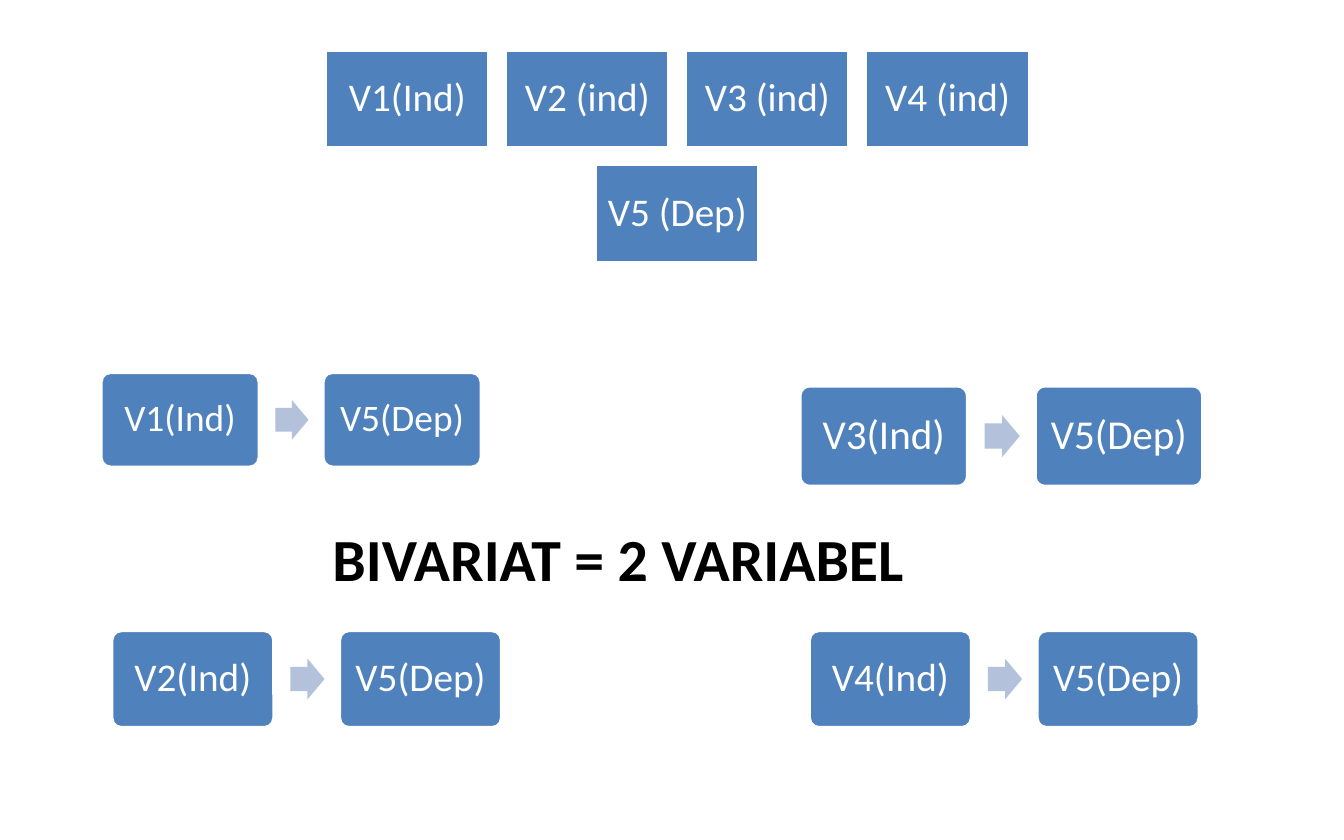
"""Build a slide of variable boxes and their bivariate pairings."""
from pptx import Presentation
from pptx.dml.color import RGBColor as Rgb
from pptx.enum.shapes import MSO_SHAPE as Shape
from pptx.enum.text import MSO_ANCHOR as Anchor, MSO_AUTO_SIZE as AutoSize, PP_ALIGN as Align
from pptx.util import Inches, Pt

COLORS = {"box": "4F81BD", "arrow": "B3C1DB", "white": "FFFFFF", "black": "000000"}
WIDTH, HEIGHT = 10, 6.25
BOX_RATIO = 0.6
GRID_BOX, GRID_GAP = 1.22, 0.12
GRID_CENTER, GRID_TOP = 5.04, 0.37
GRID_ROWS = [["V1(Ind)", "V2 (ind)", "V3 (ind)", "V4 (ind)"], ["V5 (Dep)"]]
PAIRS = [
    ("V1(Ind)", 0.75, 2.77, 1.18, 20),
    ("V2(Ind)", 0.83, 4.69, 1.21, 21),
    ("V3(Ind)", 5.95, 2.87, 1.25, 22),
    ("V4(Ind)", 6.02, 4.69, 1.21, 21),
]


def color(name):
    return Rgb.from_string(COLORS[name])


def write_text(shape, text, size, ink, bold=False, spacing=0.9):
    frame = shape.text_frame
    frame_format = {"word_wrap": False, "auto_size": AutoSize.NONE,
                    "vertical_anchor": Anchor.MIDDLE}
    for name, value in frame_format.items():
        setattr(frame, name, value)
    para = frame.paragraphs[0]
    para.alignment, para.line_spacing = Align.CENTER, spacing
    span = para.add_run()
    span.text = text
    for name, value in {"name": "Calibri", "size": Pt(size), "bold": bold}.items():
        setattr(span.font, name, value)
    span.font.color.rgb = color(ink)


def add_filled(page, kind, left, top, width, height, fill):
    shape = page.shapes.add_shape(kind, *map(Inches, (left, top, width, height)))
    shape.shadow.inherit = False
    shape.fill.solid()
    shape.fill.fore_color.rgb = color(fill)
    shape.line.fill.background()
    return shape


def add_box(page, kind, text, left, top, width, size):
    box = add_filled(page, kind, left, top, width, width * BOX_RATIO, "box")
    box.line.color.rgb = color("white")
    box.line.width = Pt(2)
    if kind == Shape.ROUNDED_RECTANGLE:
        box.adjustments[0] = 0.1
    write_text(box, text, size, "white")


def add_grid(page):
    for row, labels in enumerate(GRID_ROWS):
        span = len(labels) * (GRID_BOX + GRID_GAP) - GRID_GAP
        top = GRID_TOP + row * (GRID_BOX * BOX_RATIO + GRID_GAP)
        for column, label in enumerate(labels):
            left = GRID_CENTER - span / 2 + column * (GRID_BOX + GRID_GAP)
            add_box(page, Shape.RECTANGLE, label, left, top, GRID_BOX, 21)


def add_pair(page, source, left, top, width, size):
    for column, label in enumerate((source, "V5(Dep)")):
        add_box(page, Shape.ROUNDED_RECTANGLE, label,
                left + column * 1.4 * width, top, width, size)
    arrow_height = 0.25 * width
    arrow_top = top + (BOX_RATIO * width - arrow_height) / 2
    arrow = add_filled(page, Shape.RIGHT_ARROW, left + 1.1 * width, arrow_top,
                       0.21 * width, arrow_height, "arrow")
    arrow.adjustments[0], arrow.adjustments[1] = 0.6, 0.5


def place_title(page, text):
    title = page.shapes.title
    place = {"left": 2.24, "top": 3.83, "width": 4.72, "height": 0.64}
    for name, value in place.items():
        setattr(title, name, Inches(value))
    write_text(title, text, 32, "black", bold=True, spacing=1.0)


def main():
    deck = Presentation()
    deck.slide_width, deck.slide_height = Inches(WIDTH), Inches(HEIGHT)
    page = deck.slides.add_slide(deck.slide_layouts.get_by_name("Title Only"))
    add_grid(page)
    for pair in PAIRS:
        add_pair(page, *pair)
    place_title(page, "BIVARIAT = 2 VARIABEL")
    deck.save("out.pptx")


if __name__ == "__main__":
    main()
